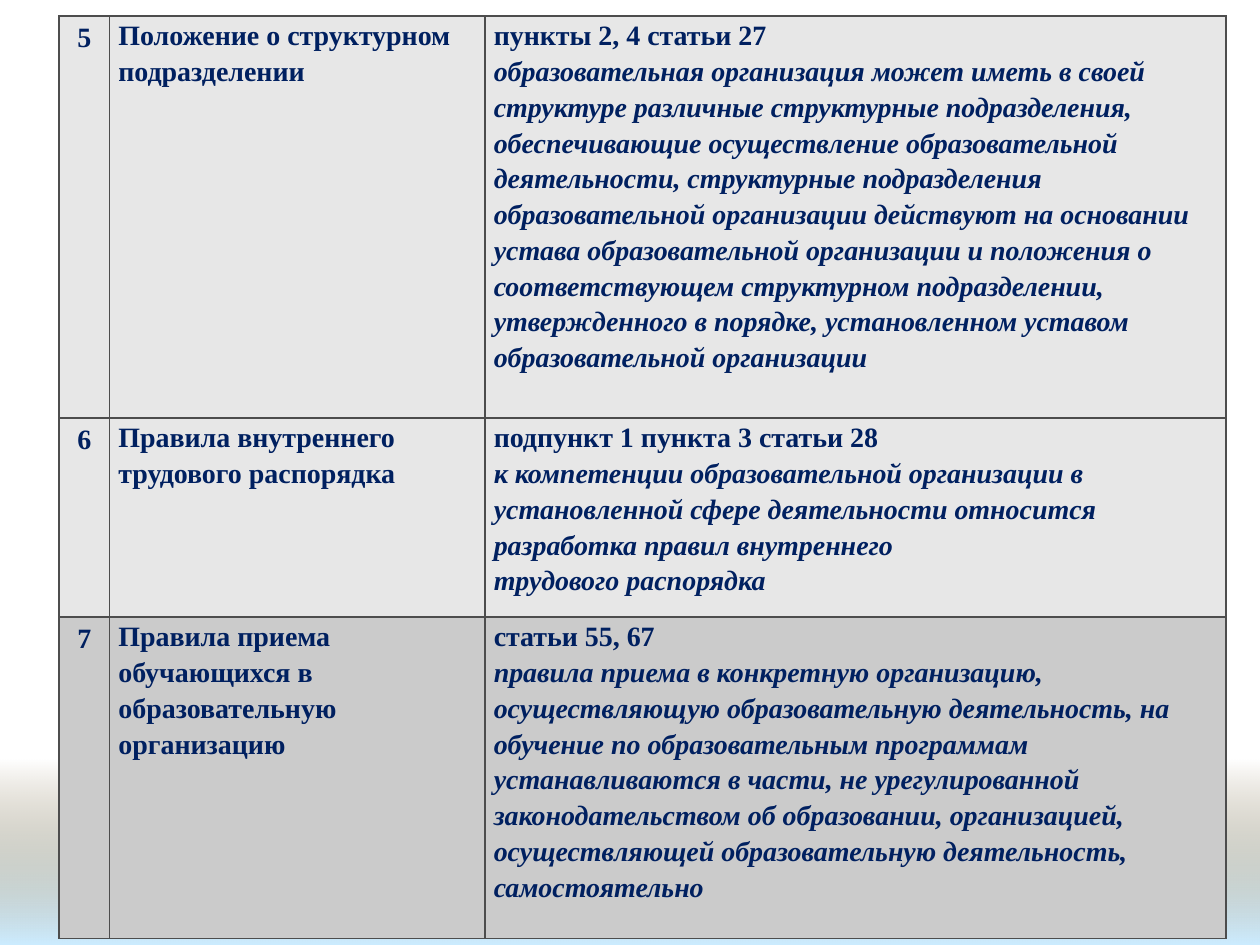
from lxml.etree import SubElement
from pptx import Presentation
from pptx.dml.color import RGBColor
from pptx.enum.shapes import MSO_SHAPE as Shape
from pptx.enum.text import PP_ALIGN as Align
from pptx.oxml.ns import qn
from pptx.util import Pt

NAVY = RGBColor(0x00, 0x20, 0x60)
BROWN = RGBColor(0x76, 0x5E, 0x2F)
SKY = RGBColor(0xCC, 0xEC, 0xFF)
PALE = RGBColor(0xEE, 0xF1, 0xF9)
LIGHT_GREY = RGBColor(0xE7, 0xE7, 0xE7)
MID_GREY = RGBColor(0xCB, 0xCB, 0xCB)
BORDER = RGBColor(0x4D, 0x4D, 0x4D)

FONT = "Times New Roman"
COLUMN_WIDTHS = (28.9, 214.5, 423.4)

# Height, fill, number, document name, legal reference, explanation
ROWS = [
    (229.7, LIGHT_GREY, "5",
     ["Положение о структурном", "подразделении"],
     "пункты 2, 4 статьи 27",
     ["образовательная организация может иметь в своей структуре различные "
      "структурные подразделения, обеспечивающие осуществление образовательной "
      "деятельности, структурные подразделения образовательной организации "
      "действуют на основании",
      "устава образовательной организации и положения о соответствующем "
      "структурном подразделении, утвержденного в порядке, установленном "
      "уставом образовательной организации"]),
    (113.8, LIGHT_GREY, "6",
     ["Правила внутреннего трудового распорядка"],
     "подпункт 1 пункта 3 статьи 28",
     ["к компетенции образовательной организации в установленной сфере "
      "деятельности относится разработка правил внутреннего",
      "трудового распорядка"]),
    (183.6, MID_GREY, "7",
     ["Правила приема обучающихся в образовательную", "организацию"],
     "статьи 55, 67",
     ["правила приема в конкретную организацию, осуществляющую образовательную "
      "деятельность, на обучение по образовательным программам устанавливаются "
      "в части, не урегулированной законодательством об образовании, "
      "организацией, осуществляющей образовательную деятельность, "
      "самостоятельно"]),
]


def add_panel(slide, kind, left, top, width, height):
    shape = slide.shapes.add_shape(kind, Pt(left), Pt(top), Pt(width), Pt(height))
    shape.shadow.inherit = False
    return shape


def add_bottom_glow(slide):
    """Band that fades in from fully transparent brown to sky blue."""
    shape = add_panel(slide, Shape.RECTANGLE, 0, 434, 720, 106)
    shape.line.fill.background()
    shape.fill.gradient()
    shape.fill.gradient_angle = 270
    for stop, position, color in zip(shape.fill.gradient_stops, (0, 1), (BROWN, SKY)):
        stop.position = position
        stop.color.rgb = color
    first_color = next(shape._element.spPr.iter(qn("a:srgbClr")))
    SubElement(first_color, qn("a:alpha"), val="0")


def add_backing(slide):
    shape = add_panel(slide, Shape.FLOWCHART_PROCESS, 39.6, 33.8, 641.5, 472.3)
    shape.fill.solid()
    shape.fill.fore_color.rgb = PALE
    shape.line.color.rgb = PALE
    shape.line.width = Pt(2)


def format_cell(cell, color):
    properties = cell._tc.get_or_add_tcPr()
    for side in ("lnL", "lnR", "lnT", "lnB"):
        line = SubElement(properties, qn(f"a:{side}"), w=str(Pt(1)))
        fill = SubElement(line, qn("a:solidFill"))
        SubElement(fill, qn("a:srgbClr"), val=str(BORDER))
    cell.fill.solid()
    cell.fill.fore_color.rgb = color


def format_runs(paragraph, italic=False):
    for run in paragraph.runs:
        run.font.name = FONT
        run.font.size = Pt(16)
        run.font.bold = True
        run.font.italic = italic
        run.font.color.rgb = NAVY


def write_number(cell, number):
    cell.text_frame.text = number
    paragraph = cell.text_frame.paragraphs[0]
    paragraph.alignment = Align.CENTER
    format_runs(paragraph)


def write_lines(cell, plain, italic=()):
    cell.margin_left = cell.margin_right = Pt(5)
    cell.margin_top = cell.margin_bottom = 0
    cell.text_frame.text = "\n".join([*plain, *italic])
    for index, paragraph in enumerate(cell.text_frame.paragraphs):
        paragraph.line_spacing = 1.15
        format_runs(paragraph, italic=index >= len(plain))


def add_regulations_table(slide):
    heights = [row[0] for row in ROWS]
    frame = slide.shapes.add_table(len(ROWS), len(COLUMN_WIDTHS), Pt(33.8), Pt(9.2),
                                   Pt(sum(COLUMN_WIDTHS)), Pt(sum(heights)))
    table = frame.table
    table.first_row = table.horz_banding = False
    for column, width in zip(table.columns, COLUMN_WIDTHS):
        column.width = Pt(width)
    for row, content in zip(table.rows, ROWS):
        height, color, number, name, reference, explanation = content
        row.height = Pt(height)
        for cell in row.cells:
            format_cell(cell, color)
        number_cell, name_cell, basis_cell = row.cells
        write_number(number_cell, number)
        write_lines(name_cell, name)
        write_lines(basis_cell, [reference], explanation)


def main():
    presentation = Presentation()
    presentation.slide_width, presentation.slide_height = Pt(720), Pt(540)
    slide = presentation.slides.add_slide(presentation.slide_layouts[6])

    # Background decoration
    add_bottom_glow(slide)
    add_backing(slide)

    # Table of local regulations
    add_regulations_table(slide)
    presentation.save("out.pptx")


if __name__ == "__main__":
    main()
